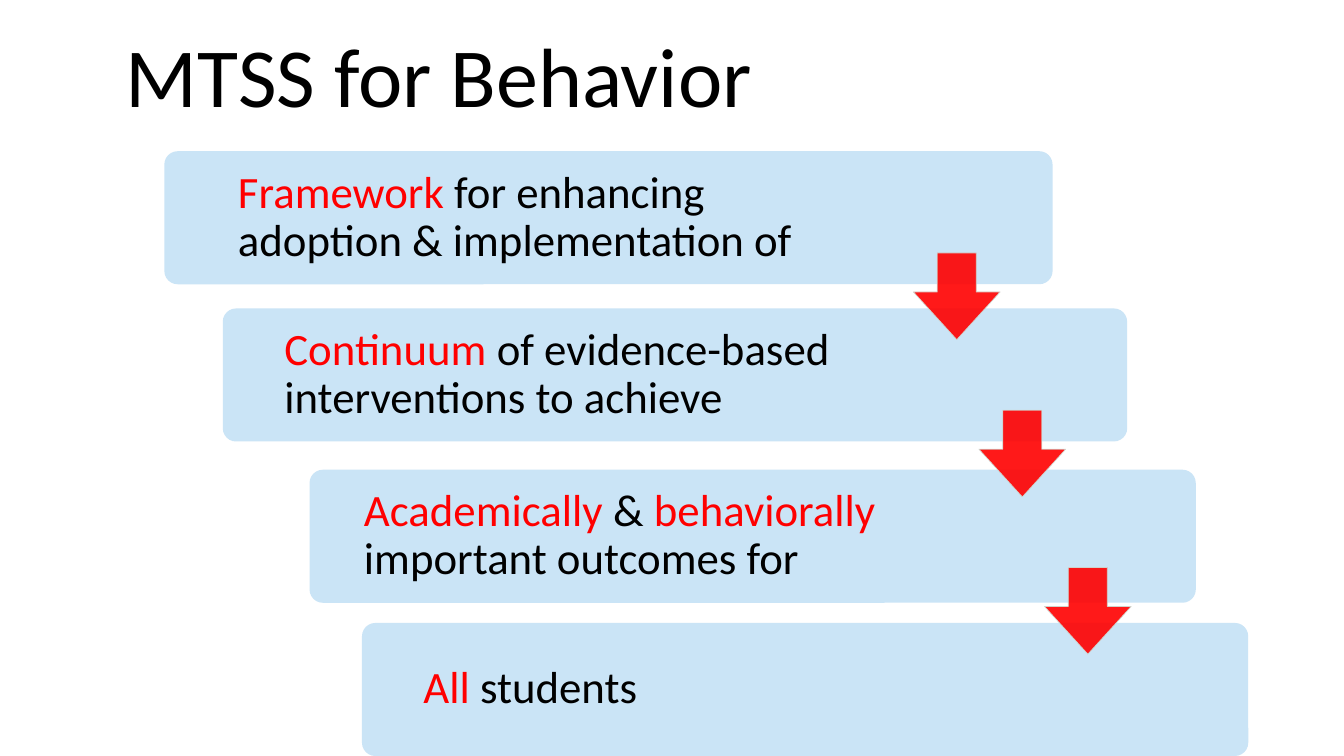
from lxml import etree
from pptx import Presentation
from pptx.dml.color import RGBColor
from pptx.enum.shapes import MSO_SHAPE
from pptx.enum.text import MSO_ANCHOR
from pptx.oxml.ns import qn
from pptx.util import Inches, Pt

ROUND = MSO_SHAPE.ROUNDED_RECTANGLE
DOWN = MSO_SHAPE.DOWN_ARROW
MIDDLE = MSO_ANCHOR.MIDDLE
BLACK, RED, BLUE, GREY = "000000", "FF0000", "CAE4F6", "CDDED6"


def color(code):
    return RGBColor.from_string(code)


def write(box, runs, size, left=0.1, pad=0.1):
    """Fill a text box with one paragraph of (text, colour) runs."""
    frame = box.text_frame
    frame.word_wrap = True
    frame.vertical_anchor = MIDDLE
    frame.margin_left = Inches(left)
    frame.margin_right = Inches(pad)
    para = frame.paragraphs[0]
    para.line_spacing = 0.9
    for text, code in runs:
        run = para.add_run()
        run.text = text
        run.font.name = "Calibri"
        run.font.size = Pt(size)
        run.font.color.rgb = color(code)


deck = Presentation()
deck.slide_width, deck.slide_height = Inches(13.33), Inches(7.5)
slide = deck.slides.add_slide(deck.slide_layouts[6])
shapes = slide.shapes

# Title
title = shapes.add_textbox(Inches(1.15), Inches(0.17), Inches(10.43), Inches(1.25))
write(title, [("MTSS for Behavior", BLACK)], 60)

# Steps: left, top, width, text width, indent, runs
HIGH, EDGE, PAD = 1.32, 0.04, 0.13
steps = [
    (1.63, 1.5, 8.81, 7.08, 0.56,
     [("Framework", RED), (" for enhancing adoption & implementation of", BLACK)]),
    (2.21, 3.06, 8.97, 7.15, 0.44,
     [("Continuum ", RED), ("of evidence-based interventions to achieve", BLACK)]),
    (3.07, 4.66, 8.79, 7.02, 0.37,
     [("Academically ", RED), ("& ", BLACK), ("behaviorally", RED),
      (" important outcomes for", BLACK)]),
    (3.59, 6.18, 8.79, 7, 0.44,
     [("All ", RED), ("students", BLACK)]),
]
for left, top, wide, span, indent, runs in steps:
    bar = shapes.add_shape(ROUND, Inches(left), Inches(top), Inches(wide), Inches(HIGH))
    bar.adjustments[0] = 0.1
    bar.shadow.inherit = False
    bar.fill.solid()
    bar.fill.fore_color.rgb = color(BLUE)
    bar.line.fill.background()
    label = shapes.add_textbox(Inches(left + EDGE), Inches(top + EDGE),
                               Inches(span), Inches(HIGH - 2 * EDGE))
    write(label, runs, 32, PAD + indent, PAD)

# Arrows, one across each gap between steps
SIDE = 0.86
for i in range(3):
    arrow = shapes.add_shape(DOWN, Inches(9.06 + 0.65 * i), Inches(2.51 + 1.56 * i),
                             Inches(SIDE), Inches(SIDE))
    arrow.adjustments[0] = 0.45
    arrow.adjustments[1] = 0.55
    arrow.shadow.inherit = False
    arrow.fill.solid()
    arrow.fill.fore_color.rgb = color(RED)
    arrow.line.color.rgb = color(GREY)
    arrow.line.width = Pt(0.5)
    # Ten percent transparency on fill and line
    for tint in arrow._element.spPr.iter(qn("a:srgbClr")):
        etree.SubElement(tint, qn("a:alpha")).set("val", "90000")

deck.save("out.pptx")
